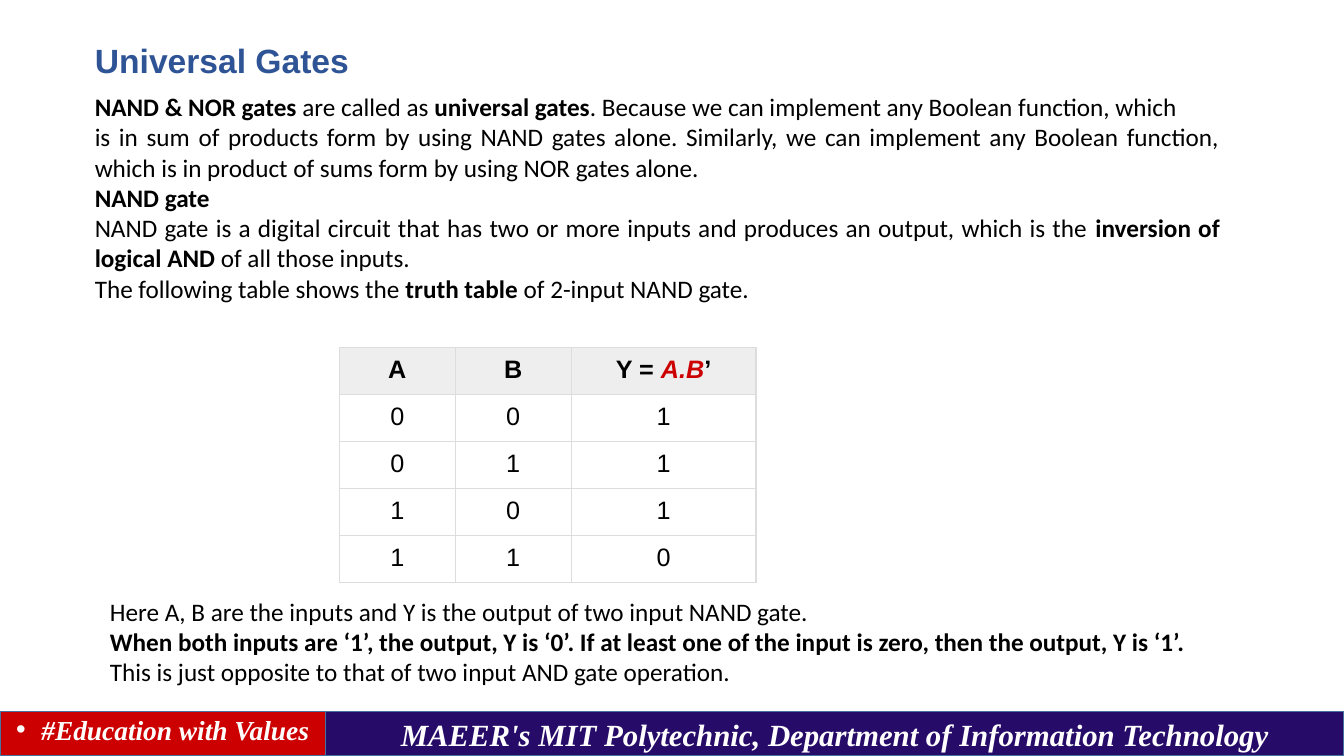
from dataclasses import dataclass

from lxml.etree import SubElement
from pptx import Presentation
from pptx.dml.color import RGBColor
from pptx.enum.shapes import MSO_SHAPE
from pptx.enum.text import MSO_ANCHOR, PP_ALIGN
from pptx.oxml.ns import qn
from pptx.util import Inches, Pt


@dataclass(frozen=True)
class Theme:
    ink: str = "000000"
    heading: str = "2F5496"
    red: str = "CC0000"
    navy: str = "260B69"
    white: str = "FFFFFF"
    outline: str = "43739E"
    header_fill: str = "EEEEEE"
    border: str = "DDDDDD"
    sans: str = "Arial"
    body: str = "Calibri"
    serif: str = "Times New Roman"
    title_size: float = 24
    body_size: float = 18
    tag_size: float = 19.6
    footer_size: float = 22


class GridSlide:
    """One slide on a grid of 160 columns by 90 rows."""
    COLS, ROWS = 160, 90

    def __init__(self, prs, theme):
        self.theme = theme
        self.col = prs.slide_width / self.COLS
        self.row = prs.slide_height / self.ROWS
        self.s = prs.slides.add_slide(prs.slide_layouts[5])

    def box(self, x, y, w, h):
        return (int(x * self.col), int(y * self.row),
                int(w * self.col), int(h * self.row))

    def style(self, r, font, size, color, bold=False, italic=False):
        r.font.name, r.font.size = font, Pt(size)
        r.font.bold, r.font.italic = bold, italic
        r.font.color.rgb = RGBColor.from_string(color)

    def fill_paragraph(self, p, text, font, align, bold=False):
        """Fill a paragraph; parts between ** marks are bold."""
        p.alignment = align
        for i, part in enumerate(text.split("**")):
            if part:
                r = p.add_run()
                r.text = part
                self.style(r, font, self.theme.body_size, self.theme.ink,
                           bold or i % 2 == 1)

    def title(self, text, *place):
        sp = self.s.shapes.title
        sp.left, sp.top, sp.width, sp.height = self.box(*place)
        tf = sp.text_frame
        tf.text = text
        tf.vertical_anchor = MSO_ANCHOR.TOP
        p = tf.paragraphs[0]
        p.alignment = PP_ALIGN.LEFT
        self.style(p.runs[0], self.theme.sans, self.theme.title_size,
                   self.theme.heading, bold=True)

    def text(self, lines, align, *place):
        tf = self.s.shapes.add_textbox(*self.box(*place)).text_frame
        tf.word_wrap = True
        for i, line in enumerate(lines):
            p = tf.add_paragraph() if i else tf.paragraphs[0]
            self.fill_paragraph(p, line, self.theme.body, align)

    def band(self, text, fill, size, *place):
        sp = self.s.shapes.add_shape(MSO_SHAPE.RECTANGLE, *self.box(*place))
        sp.shadow.inherit = False
        sp.fill.solid()
        sp.fill.fore_color.rgb = RGBColor.from_string(fill)
        sp.line.color.rgb = RGBColor.from_string(self.theme.outline)
        sp.line.width = Pt(1)
        tf = sp.text_frame
        tf.text = text
        tf.word_wrap = True
        tf.vertical_anchor = MSO_ANCHOR.MIDDLE
        p = tf.paragraphs[0]
        p.alignment = PP_ALIGN.CENTER
        self.style(p.runs[0], self.theme.serif, size, self.theme.white,
                   bold=True, italic=True)
        return p

    def bullet(self, p, indent, spacing):
        pPr = p._p.get_or_add_pPr()
        pPr.set("marL", str(Inches(indent)))
        pPr.set("indent", str(-Inches(indent)))
        SubElement(pPr, qn("a:buFont"), typeface=self.theme.sans)
        SubElement(pPr, qn("a:buChar"), char="•")
        p.line_spacing = spacing

    def borders(self, cell):
        tcPr = cell._tc.get_or_add_tcPr()
        for side in ("lnL", "lnR", "lnT", "lnB"):
            ln = SubElement(tcPr, qn(f"a:{side}"), w=str(Pt(1)))
            fill = SubElement(ln, qn("a:solidFill"))
            SubElement(fill, qn("a:srgbClr"), val=self.theme.border)

    def table(self, rows, x, y, widths, row_height):
        place = self.box(x, y, sum(widths), row_height * len(rows))
        table = self.s.shapes.add_table(len(rows), len(widths), *place).table
        table.horz_banding = False
        for column, width in zip(table.columns, widths):
            column.width = int(width * self.col)
        for i, values in enumerate(rows):
            for j, value in enumerate(values):
                cell = table.cell(i, j)
                cell.margin_left = cell.margin_right = Inches(0.08)
                cell.margin_top = cell.margin_bottom = Inches(0.08)
                self.borders(cell)
                if i == 0:
                    cell.fill.solid()
                    cell.fill.fore_color.rgb = RGBColor.from_string(
                        self.theme.header_fill)
                else:
                    cell.fill.background()
                self.fill_paragraph(cell.text_frame.paragraphs[0], value,
                                    self.theme.sans, PP_ALIGN.CENTER,
                                    bold=i == 0)
        return table


def main():
    prs = Presentation()
    prs.slide_width, prs.slide_height = Inches(13.33), Inches(7.5)
    theme = Theme()
    s = GridSlide(prs, theme)

    # Footer bands
    split, top, height = 38.75, 84.7, 5.3
    tag = s.band("#Education with Values", theme.red, theme.tag_size,
                 0, top, split, height)
    s.bullet(tag, 0.25, 0.7)
    s.band("MAEER's MIT Polytechnic, Department of Information Technology",
           theme.navy, theme.footer_size, split, top, s.COLS - split, height)

    # Title and introduction
    s.title("Universal Gates", 10.1, 4.2, 139.8, 6)
    s.text([
        "**NAND & NOR gates** are called as **universal gates**. Because we "
        "can implement any Boolean function, which",
        "is in sum of products form by using NAND gates alone. Similarly, we "
        "can implement any Boolean function, which is in product of sums form "
        "by using NOR gates alone.",
        "**NAND gate**",
        "NAND gate is a digital circuit that has two or more inputs and "
        "produces an output, which is the **inversion of logical AND** of all "
        "those inputs.",
        "The following table shows the **truth table** of 2-input NAND gate.",
    ], PP_ALIGN.JUSTIFY, 10.1, 10.3, 136.3, 30.2)

    # Truth table
    truth = [(a, b, 1 - a * b) for a in (0, 1) for b in (0, 1)]
    rows = [("A", "B", "Y = **A.B**’")] + [map(str, line) for line in truth]
    table = s.table(rows, 40.4, 41.4, (13.8, 13.8, 22), 5.6)
    product = table.cell(0, 2).text_frame.paragraphs[0].runs[1]
    s.style(product, theme.sans, theme.body_size, theme.red,
            bold=True, italic=True)

    # Reading of the table
    s.text([
        "Here A, B are the inputs and Y is the output of two input NAND gate.",
        "**When both inputs are ‘1’, the output, Y is ‘0’. If at least one of "
        "the input is zero, then the output, Y is ‘1’.**",
        "This is just opposite to that of two input AND gate operation.",
    ], PP_ALIGN.LEFT, 11.9, 70.4, 136.3, 12.1)

    prs.save("out.pptx")


if __name__ == "__main__":
    main()
